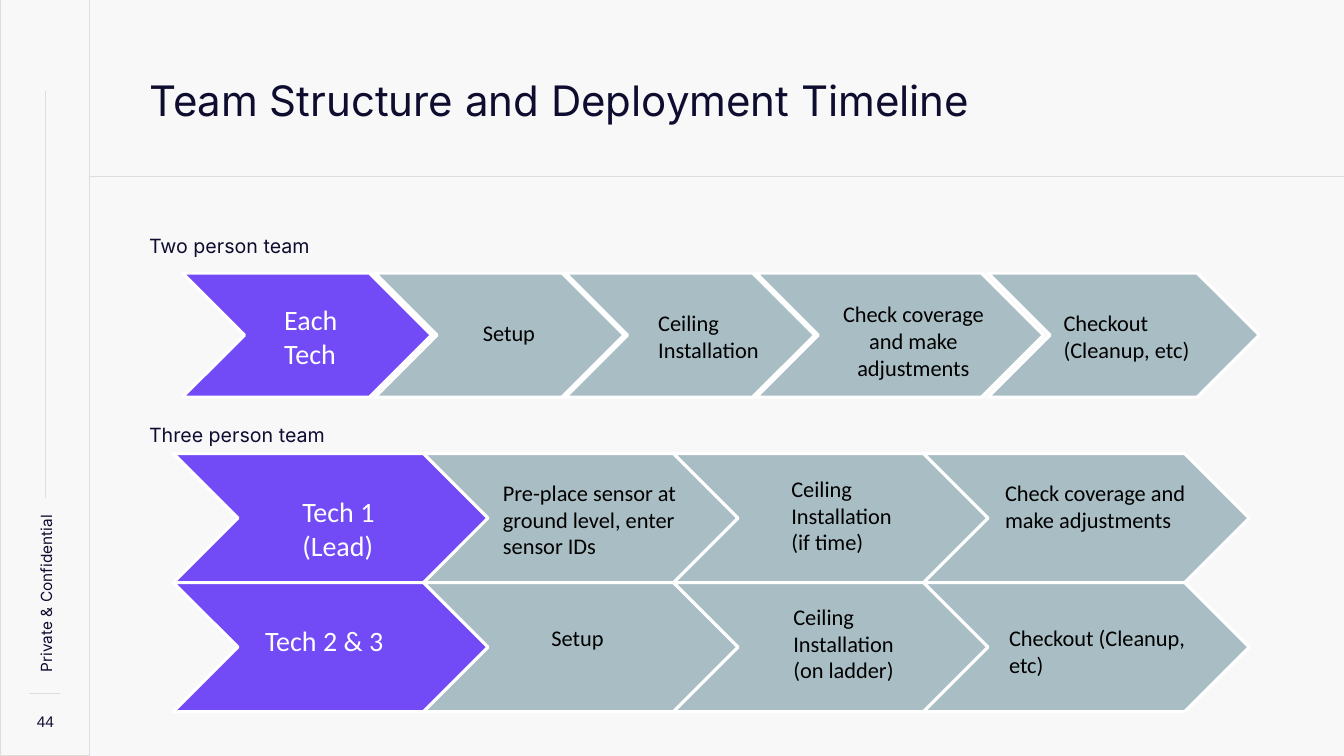
import pptx
import pptx.util
import pptx.dml.color
import pptx.enum.shapes
import pptx.enum.text
from lxml import etree

PX = 9144
INSET = 10
COLORS = {
    "background": "F8F8F8",
    "rule": "DFDDD7",
    "ink": "0E0D30",
    "lead": "724AF6",
    "step": "A9BDC4",
    "white": "FFFFFF",
    "black": "000000",
}
SHAPE = pptx.enum.shapes.MSO_SHAPE
ALIGN = pptx.enum.text.PP_ALIGN
ANCHOR = pptx.enum.text.MSO_ANCHOR

TWO_PERSON = [(181, 247), (372, 247), (561, 247), (750, 285), (980, 269)]
THREE_PERSON = [(172 + 248 * i, 323) for i in range(4)]

TWO_LABELS = [
    (["Each Tech"], 272, 290, 92, ALIGN.LEFT),
    (["Setup"], 469, 307, 92, ALIGN.LEFT),
    (["Ceiling Installation"], 643, 297, 138, ALIGN.LEFT),
    (["Check coverage and make adjustments"], 808, 288, 196, ALIGN.CENTER),
    (["Checkout", "(Cleanup, etc)"], 1045, 297, 180, ALIGN.LEFT),
]
TECH_1_LABELS = [
    (["Tech 1", "(Lead)"], 290, 481, 120, ALIGN.LEFT),
    (["Pre-place sensor at ground level, enter sensor IDs"], 489, 465, 203, ALIGN.LEFT),
    (["Ceiling Installation", "(if time)"], 775, 461, 180, ALIGN.LEFT),
    (["Check coverage and make adjustments"], 987, 465, 214, ALIGN.LEFT),
]
TECH_2_3_LABELS = [
    (["Tech 2 & 3"], 253, 609, 159, ALIGN.LEFT),
    (["Setup"], 537, 609, 107, ALIGN.LEFT),
    (["Ceiling Installation", "(on ladder)"], 777, 588, 180, ALIGN.LEFT),
    (["Checkout (Cleanup, etc)"], 991, 609, 214, ALIGN.LEFT),
]


def px(*lengths):
    return [pptx.util.Emu(n * PX) for n in lengths]


def color(name):
    return pptx.dml.color.RGBColor.from_string(COLORS[name])


def set_text(sp, lines, font, size, ink, align=ALIGN.LEFT, spacing=1.0,
             inset=INSET, anchor=ANCHOR.TOP):
    tf = sp.text_frame
    tf.word_wrap = True
    tf.auto_size = pptx.enum.text.MSO_AUTO_SIZE.NONE
    tf.vertical_anchor = anchor
    tf.margin_left, tf.margin_top, tf.margin_right, tf.margin_bottom = px(*[inset] * 4)
    for i, line in enumerate(lines):
        p = tf.paragraphs[0] if i == 0 else tf.add_paragraph()
        p.alignment = align
        p.line_spacing = spacing
        r = p.add_run()
        r.text = line
        r.font.name = font
        r.font.size = pptx.util.Pt(size)
        r.font.color.rgb = color(ink)


def add_text(s, box, lines, font, size, ink, **options):
    sp = s.shapes.add_textbox(*px(*box))
    set_text(sp, lines, font, size, ink, **options)
    return sp


def add_box(s, kind, box, fill, line, width):
    sp = s.shapes.add_shape(kind, *px(*box))
    sp.shadow.inherit = False
    sp.fill.solid()
    sp.fill.fore_color.rgb = color(fill)
    sp.line.color.rgb = color(line)
    sp.line.width = pptx.util.Pt(width)
    return sp


def add_rule(s, x1, y1, x2, y2):
    sp = s.shapes.add_connector(
        pptx.enum.shapes.MSO_CONNECTOR.STRAIGHT, *px(x1, y1, x2, y2))
    sp.line.color.rgb = color("rule")
    sp.line.width = pptx.util.Pt(0.75)
    etree.SubElement(sp._element.spPr, pptx.oxml.ns.qn("a:effectLst"))


def add_chevrons(s, spans, y, h):
    for i, (x, w) in enumerate(spans):
        sp = add_box(s, SHAPE.CHEVRON, (x, y, w, h),
                     "step" if i else "lead", "white", 2.25)
        sp.adjustments[0] = 0.5


def add_labels(s, labels):
    for i, (lines, x, y, w, align) in enumerate(labels):
        size, ink = (16, "black") if i else (20, "white")
        add_text(s, (x, y, w, 65), lines, "Calibri", size, ink, align=align)


def add_sidebar(s):
    add_box(s, SHAPE.RECTANGLE, (0, 0, 89, 750), "background", "rule", 0.75)
    add_text(s, (20, 693, 50, 43), ["44"], "Arial", 11, "ink", align=ALIGN.CENTER,
             spacing=1.1, inset=0, anchor=ANCHOR.MIDDLE)
    add_rule(s, 29, 688, 60, 688)
    sp = add_text(s, (-41, 568, 172, 26), ["Private & Confidential"], "Inter", 11, "ink",
                  spacing=1.15, inset=0, anchor=ANCHOR.MIDDLE)
    sp.rotation = 270
    add_rule(s, 45, 90, 45, 494)


def add_title(s, text):
    sp = s.shapes.title
    sp.left, sp.top, sp.width, sp.height = px(138, 64, 969, 72)
    set_text(sp, [text], "Inter", 30, "ink")


def main():
    """Build the team structure and deployment timeline slide."""
    prs = pptx.Presentation()
    prs.slide_width, prs.slide_height = px(1333, 750)
    s = prs.slides.add_slide(prs.slide_layouts[5])
    s.background.fill.solid()
    s.background.fill.fore_color.rgb = color("background")
    add_rule(s, 89, 175, 1333, 175)
    add_sidebar(s)
    add_title(s, "Team Structure and Deployment Timeline")
    for heading, y in (("Two person team", 219), ("Three person team", 406)):
        add_text(s, (138, y, 544, 45), [heading], "Inter", 14, "ink", spacing=1.15)
    add_chevrons(s, TWO_PERSON, 271, 123)
    add_labels(s, TWO_LABELS)
    for y, labels in ((450, TECH_1_LABELS), (578, TECH_2_3_LABELS)):
        add_chevrons(s, THREE_PERSON, y, 128)
        add_labels(s, labels)
    prs.save("out.pptx")


if __name__ == "__main__":
    main()
